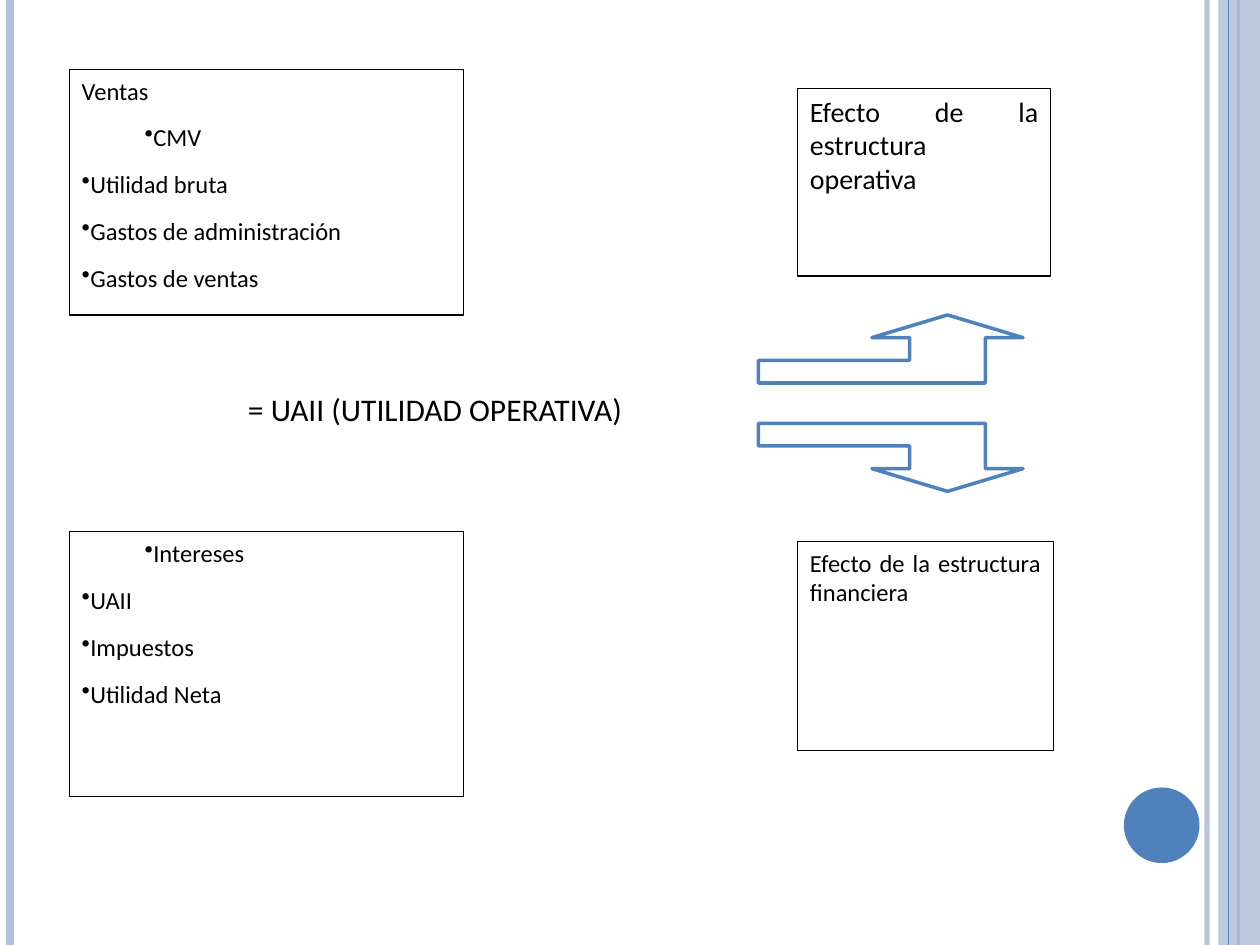
import pptx
import pptx.dml.color
import pptx.enum.shapes
import pptx.enum.text
import pptx.oxml.ns
import pptx.util
from lxml import etree
from pptx.util import Inches

qn = pptx.oxml.ns.qn
PALE, BLUE, BLACK, WHITE = "B3C1DB", "4F81BD", "000000", "FFFFFF"


def paint(color_format, color, opacity=100):
    """Set a solid colour; opacity is a percentage."""
    color_format.solid()
    color_format.fore_color.rgb = pptx.dml.color.RGBColor.from_string(color)
    if opacity < 100:
        element = color_format._xPr.find(qn("a:solidFill"))[0]
        etree.SubElement(element, qn("a:alpha"), val=str(opacity * 1000))


def write(text_frame, lines, size, alignment=None, space_after=0):
    """Fill a text frame from (text, level) pairs; level None has no bullet."""
    for index, (text, level) in enumerate(lines):
        paragraph = text_frame.paragraphs[0] if index == 0 else text_frame.add_paragraph()
        paragraph.text = text
        paragraph.alignment = alignment or pptx.enum.text.PP_ALIGN.LEFT
        paragraph.space_after = pptx.util.Pt(space_after)
        paragraph.font.name = "Calibri"
        paragraph.font.size = pptx.util.Pt(size)
        paragraph.font.color.rgb = pptx.dml.color.RGBColor.from_string(BLACK)
        if level is not None:
            paragraph.level = level
            properties = paragraph._p.get_or_add_pPr()
            properties.set("marL", str(Inches(0.5 * level)))
            properties.set("indent", "0")
            bullet = etree.Element(qn("a:buChar"), char="•")
            properties.find(qn("a:defRPr")).addprevious(bullet)


presentation = pptx.Presentation()
presentation.slide_width = Inches(10)
presentation.slide_height = Inches(7.5)
slide = presentation.slides.add_slide(presentation.slide_layouts[6])
shapes = slide.shapes
shape_types = pptx.enum.shapes.MSO_SHAPE

# Side bands: x, colour, width, opacity; the pale strip covers the line at 9.83
for x, color, width, opacity in [
    (9.58, PALE, 3, 93),
    (0.08, PALE, 4.5, 100),
    (9.83, BLUE, 1.5, 100),
    (9.67, PALE, None, 87),
    (9.75, BLUE, 0.75, 100),
]:
    if width is None:
        strip = shapes.add_shape(
            shape_types.RECTANGLE, Inches(x), 0, Inches(0.33), Inches(7.5))
        strip.shadow.inherit = False
        paint(strip.fill, color, opacity)
        strip.line.fill.background()
    else:
        line = shapes.add_connector(
            pptx.enum.shapes.MSO_CONNECTOR.STRAIGHT, Inches(x), 0, Inches(x), Inches(7.5))
        line.line.width = pptx.util.Pt(width)
        paint(line.line.fill, color, opacity)
        etree.SubElement(line._element.spPr, qn("a:effectLst"))

circle = shapes.add_shape(
    shape_types.OVAL, Inches(8.92), Inches(6.25), Inches(0.6), Inches(0.6))
circle.shadow.inherit = False
paint(circle.fill, BLUE)
circle.line.fill.background()

# Framed texts
justified = pptx.enum.text.PP_ALIGN.JUSTIFY
operating_lines = [("Ventas", None), ("CMV", 1), ("Utilidad bruta", 0),
                   ("Gastos de administración", 0), ("Gastos de ventas", 0)]
financial_lines = [("Intereses", 1), ("UAII", 0), ("Impuestos", 0), ("Utilidad Neta", 0)]
for left, top, width, height, lines, size, alignment in [
    (0.55, 0.55, 3.13, 1.95, operating_lines, 14, None),
    (0.55, 4.22, 3.13, 2.1, financial_lines, 14, None),
    (6.33, 0.7, 2.01, 1.49, [("Efecto de la estructura operativa", None)], 16, justified),
    (6.33, 4.3, 2.03, 1.66, [("Efecto de la estructura financiera", None)], 14, justified),
]:
    box = shapes.add_shape(
        shape_types.RECTANGLE, Inches(left), Inches(top), Inches(width), Inches(height))
    box.shadow.inherit = False
    paint(box.fill, WHITE)
    paint(box.line.fill, BLACK)
    box.line.width = pptx.util.Pt(0.75)
    box.text_frame.word_wrap = True
    box.text_frame.vertical_anchor = pptx.enum.text.MSO_ANCHOR.TOP
    write(box.text_frame, lines, size, alignment, space_after=10)

result = shapes.add_textbox(Inches(1.87), Inches(3.05), Inches(4.2), Inches(0.4))
result.text_frame.word_wrap = False
result.text_frame.auto_size = pptx.enum.text.MSO_AUTO_SIZE.SHAPE_TO_FIT_TEXT
write(result.text_frame, [("= UAII (UTILIDAD OPERATIVA)", None)], 18)

# Bent arrows: the lower one mirrors the upper one; y steps count from the tip
step = 0.18
outline = [(7.52, 0), (6.92, 1), (7.22, 1), (7.22, 2), (6.02, 2),
           (6.02, 3), (7.82, 3), (7.82, 1), (8.12, 1)]
for tip, direction in [(2.5, 1), (3.9, -1)]:
    points = [(Inches(x), Inches(tip + direction * step * steps)) for x, steps in outline]
    builder = shapes.build_freeform(*points[0])
    builder.add_line_segments(points[1:], close=True)
    arrow = builder.convert_to_shape()
    arrow.shadow.inherit = False
    paint(arrow.fill, WHITE)
    paint(arrow.line.fill, BLUE)
    arrow.line.width = pptx.util.Pt(2)

presentation.save("out.pptx")
